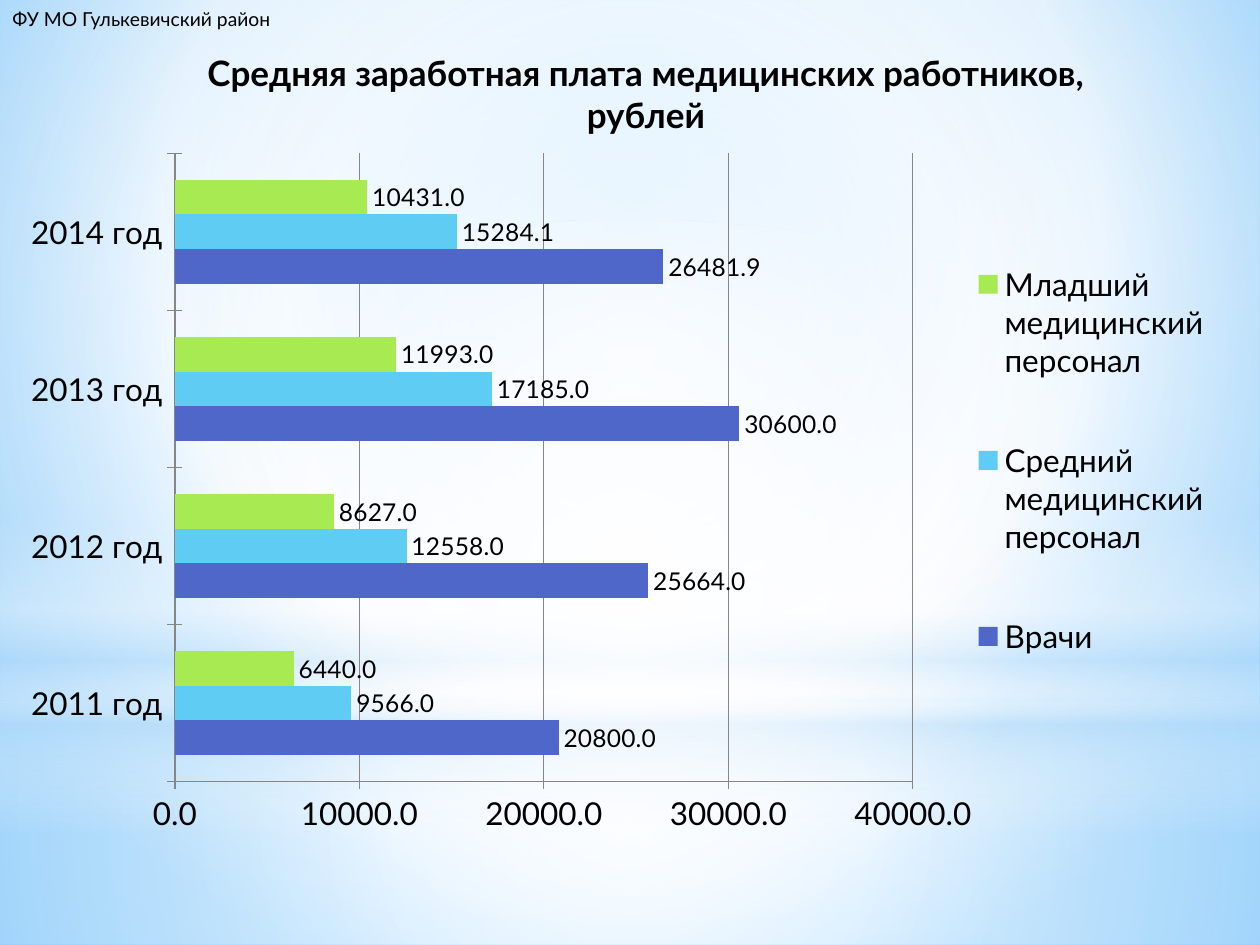
"""Build a slide with a bar chart of average medical staff wages by year."""
from lxml import etree
from pptx import Presentation
from pptx.chart.data import CategoryChartData
from pptx.dml.color import RGBColor
from pptx.enum.chart import XL_CHART_TYPE, XL_LABEL_POSITION, XL_LEGEND_POSITION, XL_TICK_MARK
from pptx.enum.shapes import MSO_SHAPE
from pptx.enum.text import MSO_ANCHOR, MSO_AUTO_SIZE, PP_ALIGN
from pptx.oxml import parse_xml
from pptx.oxml.ns import nsdecls, qn
from pptx.util import Emu, Pt

BAR, OUTSIDE, RIGHT = XL_CHART_TYPE.BAR_CLUSTERED, XL_LABEL_POSITION.OUTSIDE_END, XL_LEGEND_POSITION.RIGHT
CROSS, RECTANGLE, OVAL = XL_TICK_MARK.CROSS, MSO_SHAPE.RECTANGLE, MSO_SHAPE.OVAL
LEFT, CENTER, MIDDLE, TOP = PP_ALIGN.LEFT, PP_ALIGN.CENTER, MSO_ANCHOR.MIDDLE, MSO_ANCHOR.TOP
NO_AUTOFIT = MSO_AUTO_SIZE.NONE

FONT = "Lato"
COLORS = {
    "text": "000000", "white": "FFFFFF", "haze": "B4DCFA", "sky": "9ED5FF", "edge": "5BB9FF",
    "axis": "868686", "doctors": "4E67C8", "nurses": "5ECCF3", "juniors": "A7EA52",
}
TITLE = ["Средняя заработная плата медицинских работников,", "рублей"]
DEPARTMENT = ["ФУ МО Гулькевичский район"]
YEARS = ["2011 год", "2012 год", "2013 год", "2014 год"]
WAGES = [
    ("Врачи", "doctors", (20800, 25664, 30600, 26481.9)),
    ("Средний медицинский персонал", "nurses", (9566, 12558, 17185, 15284.1)),
    ("Младший медицинский персонал", "juniors", (6440, 8627, 11993, 10431)),
]
CENTRE = (50, 50, 50, 50)
BACKGROUND = [(0, "sky", 100), (60, "white", 100), (100, "edge", 100)]
GLOWS = [
    (RECTANGLE, (0, 703, 1260, 242), [(0, "white", 91), (37, "white", 76), (100, "haze", 79)], CENTRE),
    (RECTANGLE, (0, 0, 1260, 703), [(0, "white", 89), (48, "white", 62), (100, "haze", 79)], CENTRE),
    (RECTANGLE, (0, 519, 1260, 315), [
        (0, "white", 0), (29, "white", 30), (45, "haze", 40),
        (55, "white", 26), (65, "haze", 60), (100, "white", 0)], None),
    (OVAL, (0, 220, 1260, 703), [(0, "white", 100), (56, "white", 0)], CENTRE),
]
PLOT_AREA = (0.13, 0.03, 0.6, 0.88)
LEGEND_AREA = (0.76, 0.1, 0.23, 0.72)


def px(value):
    return Emu(round(value * 914400 / 126))


def box(*lengths):
    return [px(length) for length in lengths]


def rgb(name):
    return RGBColor.from_string(COLORS[name])


def set_gradient(fill, owner, stops, focus):
    """Fill with a circular gradient around focus, or a vertical one without it."""
    fill.solid()
    solid = owner.xpath(".//a:solidFill")[0]
    stop_xml = "".join(
        f'<a:gs pos="{position * 1000}"><a:srgbClr val="{COLORS[color]}">'
        f'<a:alpha val="{opacity * 1000}"/></a:srgbClr></a:gs>'
        for position, color, opacity in stops)
    direction = '<a:lin ang="5400000" scaled="0"/>'
    if focus:
        sides = " ".join(f'{side}="{part * 1000}"' for side, part in zip("ltrb", focus))
        direction = f'<a:path path="circle"><a:fillToRect {sides}/></a:path>'
    gradient = parse_xml(
        f'<a:gradFill rotWithShape="1" {nsdecls("a")}><a:gsLst>{stop_xml}</a:gsLst>{direction}</a:gradFill>')
    solid.getparent().replace(solid, gradient)


def format_font(font, size, bold=False, color="text"):
    font.name, font.size, font.bold = FONT, Pt(size), bold
    font.color.rgb = rgb(color)


def write_text(shape, lines, size, bold=False, align=LEFT, anchor=TOP, wrap=True):
    frame = shape.text_frame
    frame.text = "\n".join(lines)
    frame.word_wrap, frame.vertical_anchor, frame.auto_size = wrap, anchor, NO_AUTOFIT
    for paragraph in frame.paragraphs:
        paragraph.alignment = align
        format_font(paragraph.runs[0].font, size, bold)


def set_layout(element, area, inner=False):
    for old in element.findall(qn("c:layout")):
        element.remove(old)
    layout = etree.Element(qn("c:layout"))
    manual = etree.SubElement(layout, qn("c:manualLayout"))
    settings = [("layoutTarget", "inner")] if inner else []
    settings += [("xMode", "edge"), ("yMode", "edge"), *zip("xywh", area)]
    for tag, value in settings:
        etree.SubElement(manual, qn(f"c:{tag}"), val=str(value))
    element.insert(0 if inner else 1, layout)


def add_wage_chart(slide):
    data = CategoryChartData(number_format="0.0")
    data.categories = YEARS
    for name, _, values in WAGES:
        data.add_series(name, values)
    chart = slide.shapes.add_chart(BAR, *box(15, 132, 1230, 714), data).chart
    chart.has_title = False
    format_font(chart.font, 18)
    chart.has_legend = True
    chart.legend.position, chart.legend.include_in_layout = RIGHT, False
    format_font(chart.legend.font, 18)
    set_layout(chart.legend._element, LEGEND_AREA)
    set_layout(chart._chartSpace.chart.plotArea, PLOT_AREA, inner=True)

    value_axis = chart.value_axis
    value_axis.minimum_scale, value_axis.maximum_scale, value_axis.major_unit = 0, 40000, 10000
    value_axis.tick_labels.number_format = "0.0"
    value_axis.tick_labels.number_format_is_linked = False
    value_axis.has_major_gridlines = True
    for axis in (chart.category_axis, value_axis):
        axis.major_tick_mark = CROSS
        format_font(axis.tick_labels.font, 18)
    for item in (chart.category_axis, value_axis, value_axis.major_gridlines):
        item.format.line.color.rgb = rgb("axis")
        item.format.line.width = Pt(0.75)

    plot = chart.plots[0]
    plot.gap_width, plot.overlap, plot.vary_by_categories = 150, 0, False
    for series, (_, color, _) in zip(plot.series, WAGES):
        series.format.fill.solid()
        series.format.fill.fore_color.rgb = rgb(color)
        labels = series.data_labels
        labels.show_value, labels.position = True, OUTSIDE
        labels.number_format, labels.number_format_is_linked = "0.0", False
        format_font(labels.font, 14)


def main():
    presentation = Presentation()
    presentation.slide_width, presentation.slide_height = box(1260, 945)
    slide = presentation.slides.add_slide(presentation.slide_layouts[5])
    set_gradient(slide.background.fill, slide._element, BACKGROUND, (20, 10, 20, 60))
    for kind, place, stops, focus in GLOWS:
        glow = slide.shapes.add_shape(kind, *box(*place))
        glow.shadow.inherit = False
        glow.line.fill.background()
        set_gradient(glow.fill, glow._element, stops, focus)
    add_wage_chart(slide)

    title = slide.shapes.title
    title.left, title.top, title.width, title.height = box(154, 45, 984, 97)
    write_text(title, TITLE, 20, bold=True, align=CENTER, anchor=MIDDLE)
    slide.shapes._spTree.append(title._element)
    department = slide.shapes.add_textbox(*box(0, 1, 284, 37))
    write_text(department, DEPARTMENT, 11, wrap=False)
    presentation.save("out.pptx")


if __name__ == "__main__":
    main()
